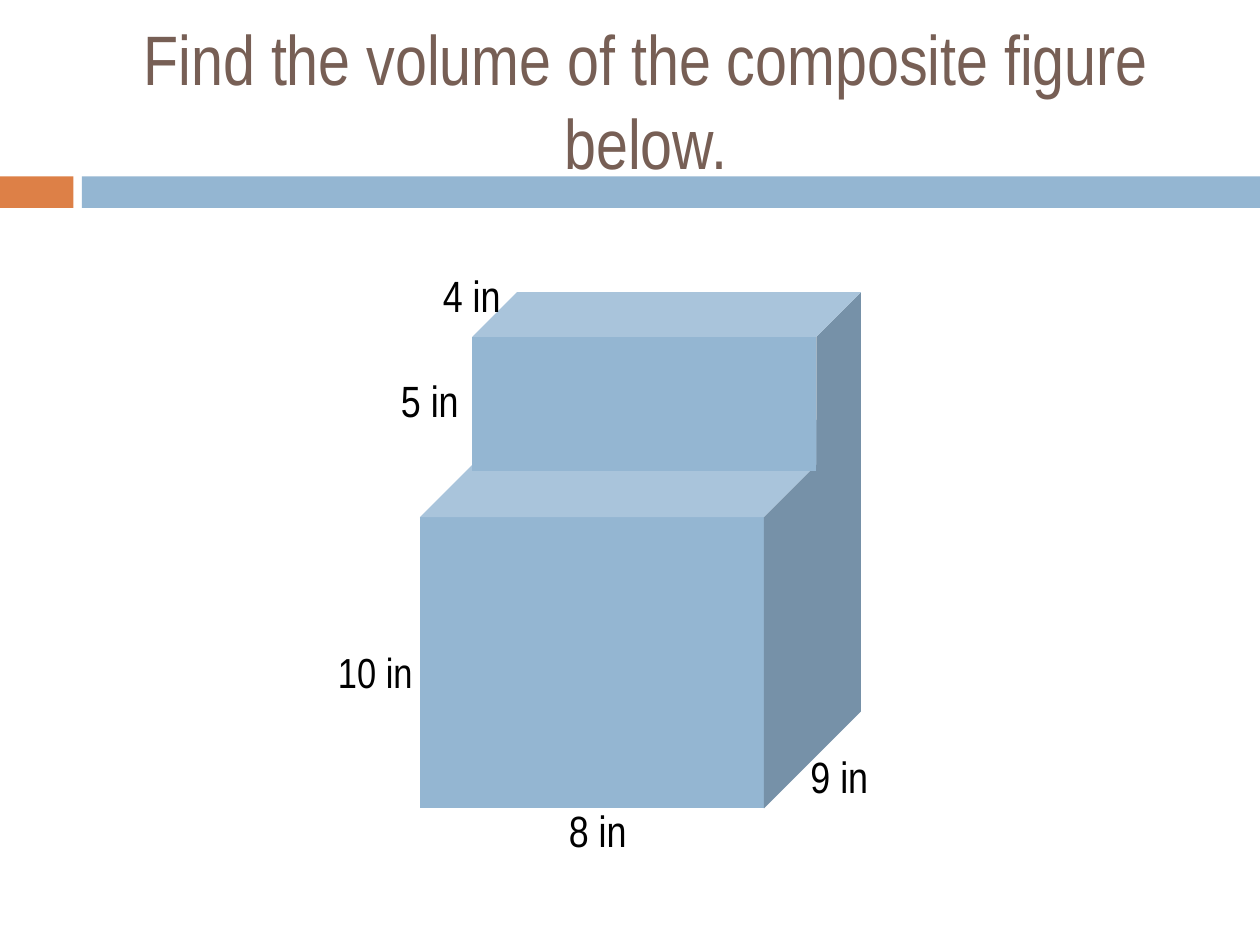
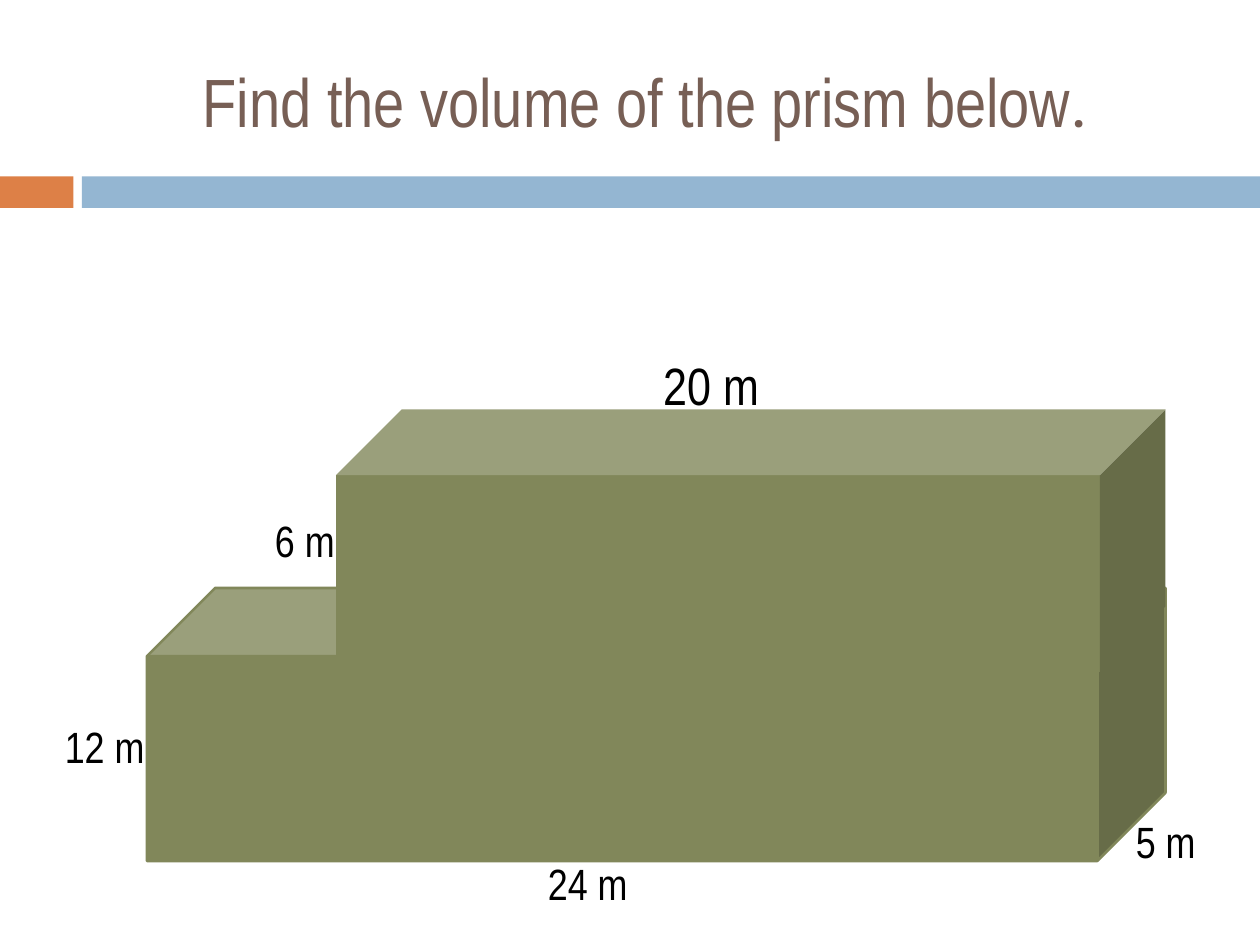
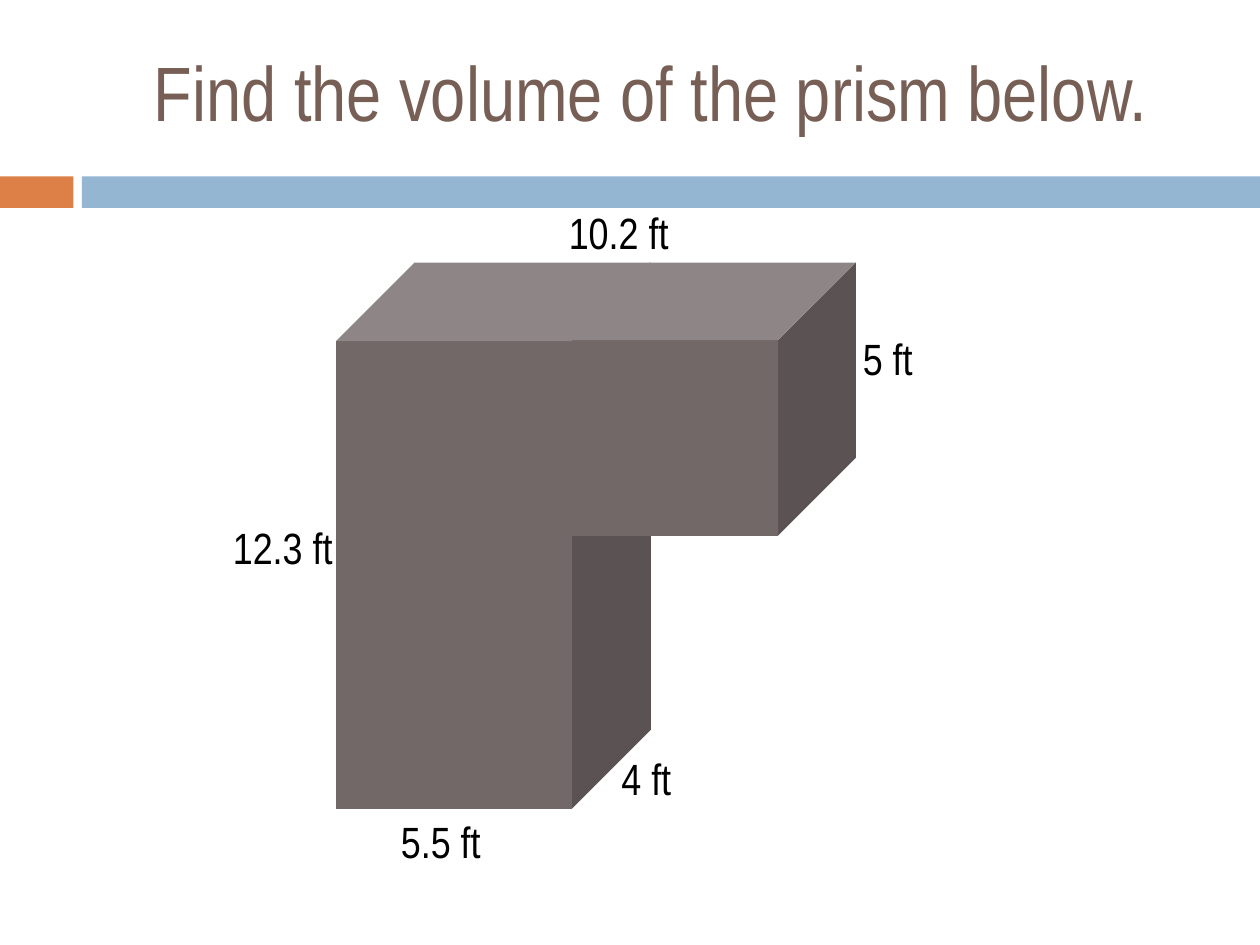
from pptx import Presentation
from pptx.dml.color import RGBColor
from pptx.enum.shapes import MSO_SHAPE
from pptx.enum.text import MSO_ANCHOR, MSO_AUTO_SIZE, PP_ALIGN
from pptx.util import Pt

SLIDE_WIDTH, SLIDE_HEIGHT = 720, 540
FONT = "Arial Narrow"
BLACK, BROWN, ORANGE = "000000", "775F55", "DD8047"
BLUE, OLIVE, TAUPE = "94B6D2", "81875A", "726868"
BAND_TOP, BAND_HEIGHT = 100.8, 18
BANDS = [(0, 42, ORANGE), (46.8, SLIDE_WIDTH - 46.8, BLUE)]
TITLE_WIDTH, TITLE_HEIGHT = 642, 78
LABEL_SIZE, CUBE_DEPTH = 25, 0.25

SLIDES = [
    {
        "title": [("Find the volume of the composite figure below.", FONT)],
        "title_at": (48, 18),
        "title_size": 40,
        "color": BLUE,
        "cubes": [
            {"box": (240, 240, 252, 222)},
            {"box": (270, 167, 222, 102)},
        ],
        "label_width": 108,
        "labels": [
            ("10 in", 186, 366, 24),
            ("8 in", 318, 456, LABEL_SIZE),
            ("4 in", 246, 150, LABEL_SIZE),
            ("9 in", 456, 425, LABEL_SIZE),
            ("5 in", 222, 210, LABEL_SIZE),
        ],
    },
    {
        "title": [("Find the volume of the prism below", FONT), (".", "Roboto")],
        "title_at": (48, 18),
        "title_size": 39,
        "color": OLIVE,
        "cubes": [
            {"box": (84, 336, 582, 156), "outline": 1.5},
            {"box": (192, 234, 474, 150)},
        ],
        "label_width": 222,
        "labels": [
            ("24 m", 306, 486, LABEL_SIZE),
            ("20 m", 372, 198, 30),
            ("12 m", 30, 408, LABEL_SIZE),
            ("5 m", 642, 462, LABEL_SIZE),
            ("6 m", 150, 290, LABEL_SIZE),
        ],
    },
    {
        "title": [("Find the volume of the prism below.", FONT)],
        "title_at": (51, 13),
        "title_size": 44,
        "color": TAUPE,
        "cubes": [
            {"box": (192, 150, 180, 312)},
            {"box": (327, 150, 162, 156), "depth": 0.284},
        ],
        "label_width": 222,
        "labels": [
            ("5.5 ft", 222, 462, LABEL_SIZE),
            ("12.3 ft", 126, 294, LABEL_SIZE),
            ("5 ft", 486, 186, LABEL_SIZE),
            ("4 ft", 348, 426, LABEL_SIZE),
            ("10.2 ft", 318, 114, LABEL_SIZE),
        ],
    },
]


def rgb(color):
    """Turn a hex string into a colour."""
    return RGBColor.from_string(color)


def add_solid(slide, kind, box, color, outline=0):
    """Add a flat filled shape, outlined in its own colour if asked."""
    shape = slide.shapes.add_shape(kind, *map(Pt, box))
    shape.shadow.inherit = False
    shape.fill.solid()
    shape.fill.fore_color.rgb = rgb(color)
    if outline:
        shape.line.color.rgb = rgb(color)
        shape.line.width = Pt(outline)
    else:
        shape.line.fill.background()
    return shape


def add_text(slide, box, runs, size, color):
    """Add a wrapping text box with one paragraph of (text, font) runs."""
    frame = slide.shapes.add_textbox(*map(Pt, box)).text_frame
    frame.word_wrap = True
    for text, font in runs:
        run = frame.paragraphs[0].add_run()
        run.text = text
        run.font.name = font
        run.font.size = Pt(size)
        run.font.color.rgb = rgb(color)
    return frame


def add_title(slide, content):
    """Add the centred slide title."""
    box = (*content["title_at"], TITLE_WIDTH, TITLE_HEIGHT)
    frame = add_text(slide, box, content["title"], content["title_size"], BROWN)
    frame.vertical_anchor = MSO_ANCHOR.MIDDLE
    frame.paragraphs[0].alignment = PP_ALIGN.CENTER


def add_label(slide, text, left, top, size, width):
    """Add an edge length, kept within the slide."""
    box = (left, top, min(width, SLIDE_WIDTH - left), 1.2 * size + 7.2)
    frame = add_text(slide, box, [(text, FONT)], size, BLACK)
    frame.auto_size = MSO_AUTO_SIZE.SHAPE_TO_FIT_TEXT


def build_slide(presentation, content):
    """Build one slide with its bands, title, solid figure and labels."""
    slide = presentation.slides.add_slide(presentation.slide_layouts[6])
    for left, width, color in BANDS:
        box = (left, BAND_TOP, width, BAND_HEIGHT)
        add_solid(slide, MSO_SHAPE.RECTANGLE, box, color)
    add_title(slide, content)
    for cube in content["cubes"]:
        shape = add_solid(slide, MSO_SHAPE.CUBE, cube["box"],
                          content["color"], cube.get("outline", 0))
        shape.adjustments[0] = cube.get("depth", CUBE_DEPTH)
    for label in content["labels"]:
        add_label(slide, *label, content["label_width"])


def main():
    """Build and save the presentation."""
    presentation = Presentation()
    presentation.slide_width = Pt(SLIDE_WIDTH)
    presentation.slide_height = Pt(SLIDE_HEIGHT)
    for content in SLIDES:
        build_slide(presentation, content)
    presentation.save("out.pptx")


if __name__ == "__main__":
    main()
